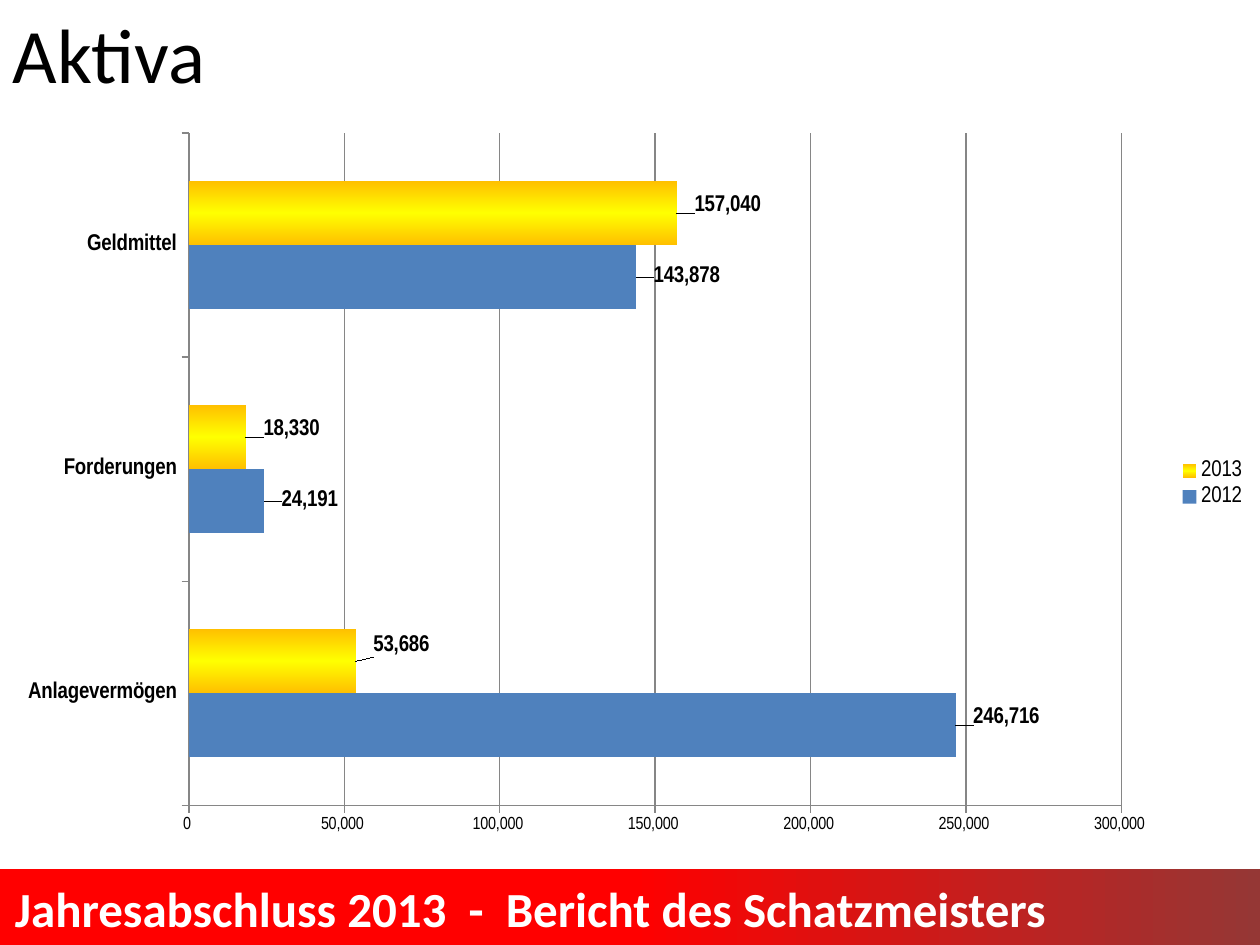
from copy import deepcopy

from pptx import Presentation
from pptx.chart.data import CategoryChartData
from pptx.dml.color import RGBColor
from pptx.enum.chart import XL_CHART_TYPE, XL_LABEL_POSITION, XL_LEGEND_POSITION, XL_TICK_MARK
from pptx.enum.shapes import MSO_SHAPE
from pptx.enum.text import MSO_ANCHOR, PP_ALIGN
from pptx.oxml import parse_xml
from pptx.oxml.ns import nsdecls, qn
from pptx.util import Inches, Pt

BLACK = RGBColor(0x00, 0x00, 0x00)
WHITE = RGBColor(0xFF, 0xFF, 0xFF)
RED = RGBColor(0xFF, 0x00, 0x00)
DARK_RED = RGBColor(0x95, 0x37, 0x35)
BLUE = RGBColor(0x4F, 0x81, 0xBD)
ORANGE = RGBColor(0xFF, 0xC0, 0x00)
YELLOW = RGBColor(0xFF, 0xFF, 0x00)
GRAY = RGBColor(0x86, 0x86, 0x86)

NUMBER_FORMAT = "#,##0_ ;[Red]\\-#,##0\\ "
AXIS_FONT = {"name": "Arial Narrow", "size": Pt(10), "bold": False}
LEGEND_FONT = {**AXIS_FONT, "size": Pt(13)}
LABEL_FONT = {**LEGEND_FONT, "bold": True}


def set_font(font, color, values):
    for key, value in values.items():
        setattr(font, key, value)
    font.color.rgb = color


def fill_gradient(fill, element, angle, colors):
    fill.gradient()
    fill.gradient_angle = angle
    stop_list = element.find(".//" + qn("a:gsLst"))
    stop_list.insert(1, deepcopy(stop_list[0]))
    for stop, position, color in zip(fill.gradient_stops, (0, 0.5, 1), colors):
        stop.position = position
        stop.color.rgb = color


def_layout = 5  # title only
prs = Presentation()
prs.slide_width, prs.slide_height = Inches(10), Inches(7.5)
slide = prs.slides.add_slide(prs.slide_layouts[def_layout])

# Footer band
band = slide.shapes.add_shape(MSO_SHAPE.RECTANGLE, 0, Inches(6.9), Inches(10), Inches(0.6))
band.shadow.inherit = False
band.line.fill.background()
fill_gradient(band.fill, band._element.spPr, 0, (RED, RED, DARK_RED))

footer = slide.shapes.add_textbox(Inches(0.02), Inches(6.92), Inches(9.79), Inches(0.57))
footer.text_frame.word_wrap = True
footer.text_frame.text = "Jahresabschluss 2013  -  Bericht des Schatzmeisters"
set_font(footer.text_frame.paragraphs[0].font, WHITE,
         {"name": "Calibri", "size": Pt(28), "bold": True})

# Title
title = slide.shapes.title
title.left, title.top, title.width, title.height = 0, 0, Inches(7.56), Inches(0.83)
title.text_frame.text = "Aktiva"
title.text_frame.vertical_anchor = MSO_ANCHOR.MIDDLE
heading = title.text_frame.paragraphs[0]
heading.alignment = PP_ALIGN.LEFT
set_font(heading.font, BLACK, {"name": "Calibri", "size": Pt(44)})

# Bar chart of assets
assets = CategoryChartData(number_format=NUMBER_FORMAT)
assets.categories = ["Anlagevermögen", "Forderungen", "Geldmittel"]
assets.add_series("2012", (246716, 24191, 143878))
assets.add_series("2013", (53686, 18330, 157040))
chart = slide.shapes.add_chart(XL_CHART_TYPE.BAR_CLUSTERED, 0, Inches(0.94),
                               Inches(10), Inches(5.8), assets).chart
chart.has_title = False
set_font(chart.font, BLACK, {"name": "Calibri", "size": Pt(10)})
plot = chart.plots[0]
plot.gap_width = 150
plot.overlap = 0
plot.vary_by_categories = False

# Plot area position as shares of the chart
plot_area = chart._chartSpace.find(".//" + qn("c:plotArea"))
for old_layout in plot_area.findall(qn("c:layout")):
    plot_area.remove(old_layout)
plot_area.insert(0, parse_xml(
    f'<c:layout {nsdecls("c")}><c:manualLayout><c:layoutTarget val="inner"/>'
    '<c:xMode val="edge"/><c:yMode val="edge"/><c:x val="0.15"/><c:y val="0.02"/>'
    '<c:w val="0.74"/><c:h val="0.92"/></c:manualLayout></c:layout>'))

# Series fills and value labels, nudged away from the bar ends
years = list(plot.series)
years[0].format.fill.solid()
years[0].format.fill.fore_color.rgb = BLUE
fill_gradient(years[1].format.fill, years[1]._element, 90, (ORANGE, YELLOW, ORANGE))
label_rises = ((0.01, 0, 0), (0.02, 0.01, 0.01))
for year, rises in zip(years, label_rises):
    year.invert_if_negative = False
    labels = year.data_labels
    labels.show_value = True
    labels.number_format = NUMBER_FORMAT
    labels.number_format_is_linked = False
    labels.position = XL_LABEL_POSITION.OUTSIDE_END
    set_font(labels.font, BLACK, LABEL_FONT)
    for index, rise in enumerate(rises):
        label = year.points[index].data_label
        label.position = XL_LABEL_POSITION.OUTSIDE_END
        set_font(label.font, BLACK, LABEL_FONT)
        position = year._element.findall(".//" + qn("c:dLbl"))[index].find(qn("c:idx"))
        position.addnext(parse_xml(
            f'<c:layout {nsdecls("c")}><c:manualLayout><c:x val="0.01"/>'
            f'<c:y val="{-rise}"/></c:manualLayout></c:layout>'))

# Axes
amounts, groups = chart.value_axis, chart.category_axis
for axis, font_values in ((amounts, AXIS_FONT), (groups, LABEL_FONT)):
    axis.major_tick_mark = XL_TICK_MARK.OUTSIDE
    axis.minor_tick_mark = XL_TICK_MARK.NONE
    axis.format.line.color.rgb = GRAY
    set_font(axis.tick_labels.font, BLACK, font_values)
amounts.minimum_scale, amounts.maximum_scale, amounts.major_unit = 0, 300000, 50000
amounts.has_major_gridlines = True
amounts.major_gridlines.format.line.color.rgb = GRAY
amounts.tick_labels.number_format = NUMBER_FORMAT
amounts.tick_labels.number_format_is_linked = False

# Legend
chart.has_legend = True
chart.legend.position = XL_LEGEND_POSITION.RIGHT
chart.legend.include_in_layout = False
set_font(chart.legend.font, BLACK, LEGEND_FONT)

prs.save("out.pptx")
